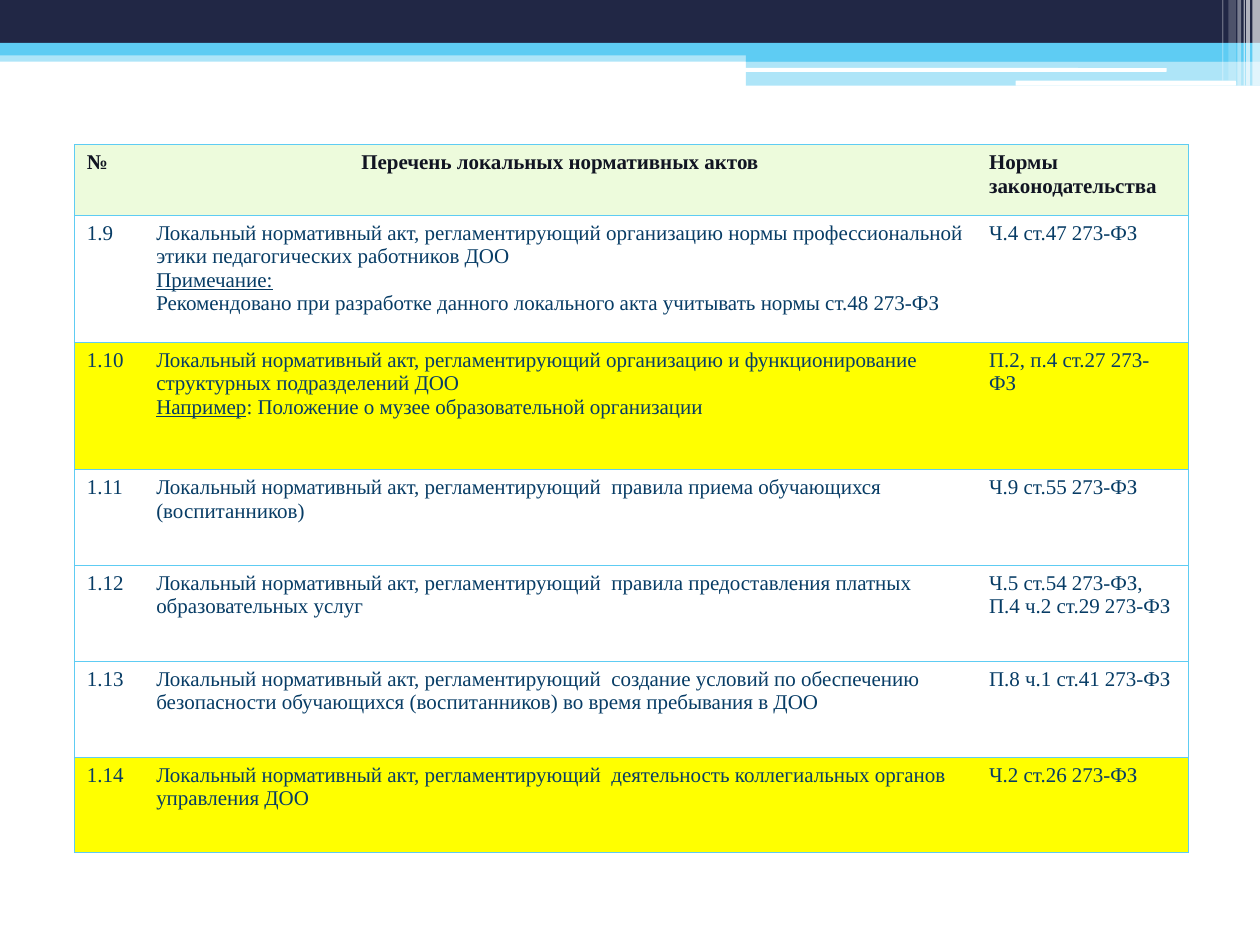
from dataclasses import dataclass
from typing import NamedTuple

from lxml import etree
from pptx import Presentation
from pptx.dml.color import RGBColor
from pptx.enum.shapes import MSO_SHAPE
from pptx.enum.text import PP_ALIGN
from pptx.oxml.ns import qn
from pptx.util import Inches, Pt

RECT, ROUND = MSO_SHAPE.RECTANGLE, MSO_SHAPE.ROUNDED_RECTANGLE
LEFT, CENTER = PP_ALIGN.LEFT, PP_ALIGN.CENTER
PLAIN_STYLE = "{2D5ABB26-0587-4C30-8999-92F81FD0307C}"


@dataclass(frozen=True)
class Theme:
    navy: str = "212745"
    cyan: str = "5ECCF3"
    white: str = "FFFFFF"
    head: str = "EDFBDC"
    mark: str = "FFFF00"
    title: str = "111422"
    text: str = "073C65"
    font: str = "Times New Roman"
    size: float = 12
    line: float = 0.75


class Bar(NamedTuple):
    left: float
    top: float
    width: float
    height: float
    color: str
    alpha: int = 100
    kind: int = RECT


class Run(NamedTuple):
    text: str
    under: bool = False


class Row(NamedTuple):
    number: str
    act: list[list[Run]]
    law: list[list[Run]]
    height: float
    fill: str | None = None


THEME = Theme()


def lines(*texts: str) -> list[list[Run]]:
    """Make one plain paragraph of each text."""
    return [[Run(text)] for text in texts]


def act(text: str) -> list[list[Run]]:
    return lines("Локальный нормативный акт, регламентирующий " + text)


BARS = [
    Bar(0, 0.4, 10, 0.09, THEME.cyan, 50),
    Bar(0, 0, 10, 0.34, THEME.navy),
    Bar(0, 0.34, 10, 0.1, THEME.cyan),
    Bar(5.92, 0.39, 4.08, 0.1, THEME.cyan),
    Bar(5.92, 0.48, 4.08, 0.2, THEME.cyan, 50),
    Bar(5.91, 0.54, 3.35, 0.03, THEME.white, kind=ROUND),
    Bar(8.06, 0.64, 1.75, 0.04, THEME.white, kind=ROUND),
] + [
    Bar(left, 0, width, height, THEME.white, alpha)
    for left, width, height, alpha in [
        (9.94, 0.06, 0.68, 65),
        (9.89, 0.03, 0.68, 65),
        (9.87, 0.01, 0.68, 60),
        (9.82, 0.03, 0.68, 40),
        (9.75, 0.06, 0.64, 20),
        (9.7, 0.01, 0.64, 30),
    ]
]

COLS = [0.55, 6.61, 1.68]
TALL, SHORT = 1.01, 0.76
ROWS = [
    Row("№", lines("Перечень локальных нормативных актов"),
        lines("Нормы законодательства"), 0.56, THEME.head),
    Row("1.9",
        act("организацию нормы профессиональной этики педагогических работников ДОО")
        + [[Run("Примечание:", True)]]
        + lines("Рекомендовано при разработке данного локального акта "
                "учитывать нормы ст.48 273-ФЗ"),
        lines("Ч.4 ст.47 273-ФЗ"), TALL),
    Row("1.10",
        act("организацию и функционирование структурных подразделений ДОО")
        + [[Run("Например", True),
            Run(": Положение о музее образовательной организации")]],
        lines("П.2, п.4 ст.27 273-ФЗ"), TALL, THEME.mark),
    Row("1.11", act(" правила приема обучающихся (воспитанников)"),
        lines("Ч.9 ст.55 273-ФЗ"), SHORT),
    Row("1.12", act(" правила предоставления платных образовательных услуг"),
        lines("Ч.5 ст.54 273-ФЗ,", "П.4 ч.2 ст.29 273-ФЗ"), SHORT),
    Row("1.13",
        act(" создание условий по обеспечению безопасности обучающихся "
            "(воспитанников) во время пребывания в ДОО"),
        lines("П.8 ч.1 ст.41 273-ФЗ"), SHORT),
    Row("1.14", act(" деятельность коллегиальных органов управления ДОО"),
        lines("Ч.2 ст.26 273-ФЗ"), SHORT, THEME.mark),
]


def draw_bar(slide, bar: Bar) -> None:
    box = [Inches(v) for v in (bar.left, bar.top, bar.width, bar.height)]
    shape = slide.shapes.add_shape(bar.kind, *box)
    shape.shadow.inherit = False
    shape.line.fill.background()
    shape.fill.solid()
    shape.fill.fore_color.rgb = RGBColor.from_string(bar.color)
    if bar.alpha < 100:
        color = shape.fill._xPr.find(".//" + qn("a:srgbClr"))
        etree.SubElement(color, qn("a:alpha"), val=str(bar.alpha * 1000))


def draw_edges(cell, shown: str) -> None:
    """Line the sides named in shown (of L, R, T, B) and clear the others."""
    props = cell._tc.get_or_add_tcPr()
    for side in "LRTB":
        edge = etree.SubElement(props, qn("a:ln" + side),
                                w=str(int(Pt(THEME.line))))
        if side in shown:
            fill = etree.SubElement(edge, qn("a:solidFill"))
            etree.SubElement(fill, qn("a:srgbClr"), val=THEME.cyan)
        else:
            etree.SubElement(edge, qn("a:noFill"))


def write(cell, paras: list[list[Run]], color: str, bold: bool, align) -> None:
    frame = cell.text_frame
    for i, runs in enumerate(paras):
        para = frame.add_paragraph() if i else frame.paragraphs[0]
        para.alignment = align
        for part in runs:
            run = para.add_run()
            run.text = part.text
            run.font.color.rgb = RGBColor.from_string(color)
            look = {"name": THEME.font, "size": Pt(THEME.size),
                    "bold": bold, "underline": part.under}
            for key, value in look.items():
                setattr(run.font, key, value)


def draw_table(slide, rows: list[Row], cols: list[float]) -> None:
    high = sum(row.height for row in rows)
    frame = slide.shapes.add_table(len(rows), len(cols), Inches(0.59),
                                   Inches(1.15), Inches(sum(cols)), Inches(high))
    table = frame.table
    table.first_row = table.horz_banding = False
    table._tbl.tblPr.find(qn("a:tableStyleId")).text = PLAIN_STYLE
    for col, width in zip(table.columns, cols):
        col.width = Inches(width)
    for r, row in enumerate(rows):
        table.rows[r].height = Inches(row.height)
        head = r == 0
        color = THEME.title if head else THEME.text
        for c, paras in enumerate([lines(row.number), row.act, row.law]):
            cell = table.cell(r, c)
            draw_edges(cell, ("LTB", "TB", "RTB")[c])
            if row.fill:
                cell.fill.solid()
                cell.fill.fore_color.rgb = RGBColor.from_string(row.fill)
            else:
                cell.fill.background()
            write(cell, paras, color, head, CENTER if head and c == 1 else LEFT)


def main() -> None:
    deck = Presentation()
    deck.slide_width, deck.slide_height = Inches(10), Inches(7.5)
    slide = deck.slides.add_slide(deck.slide_layouts[6])
    for bar in BARS:
        draw_bar(slide, bar)
    draw_table(slide, ROWS, COLS)
    deck.save("out.pptx")


if __name__ == "__main__":
    main()
